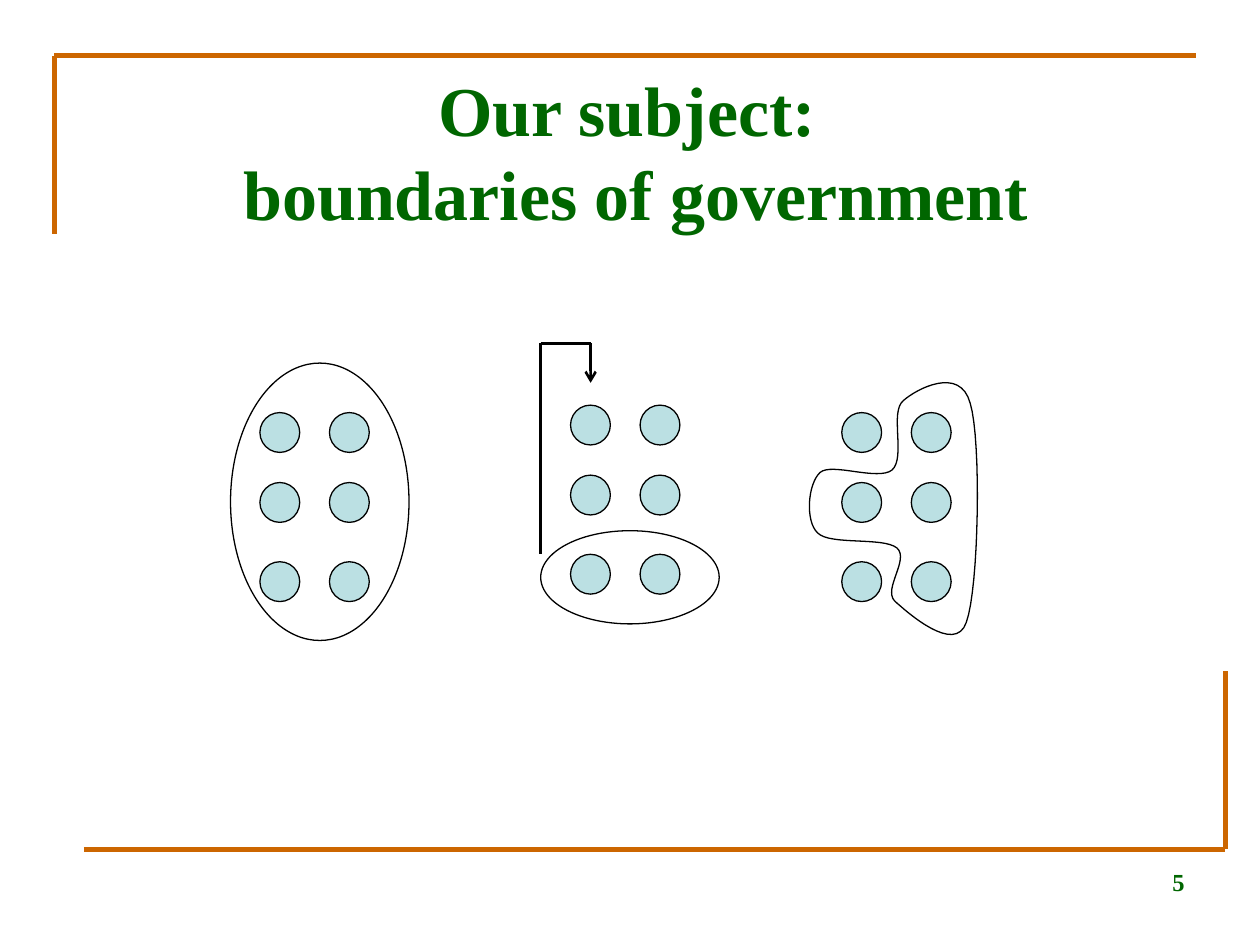
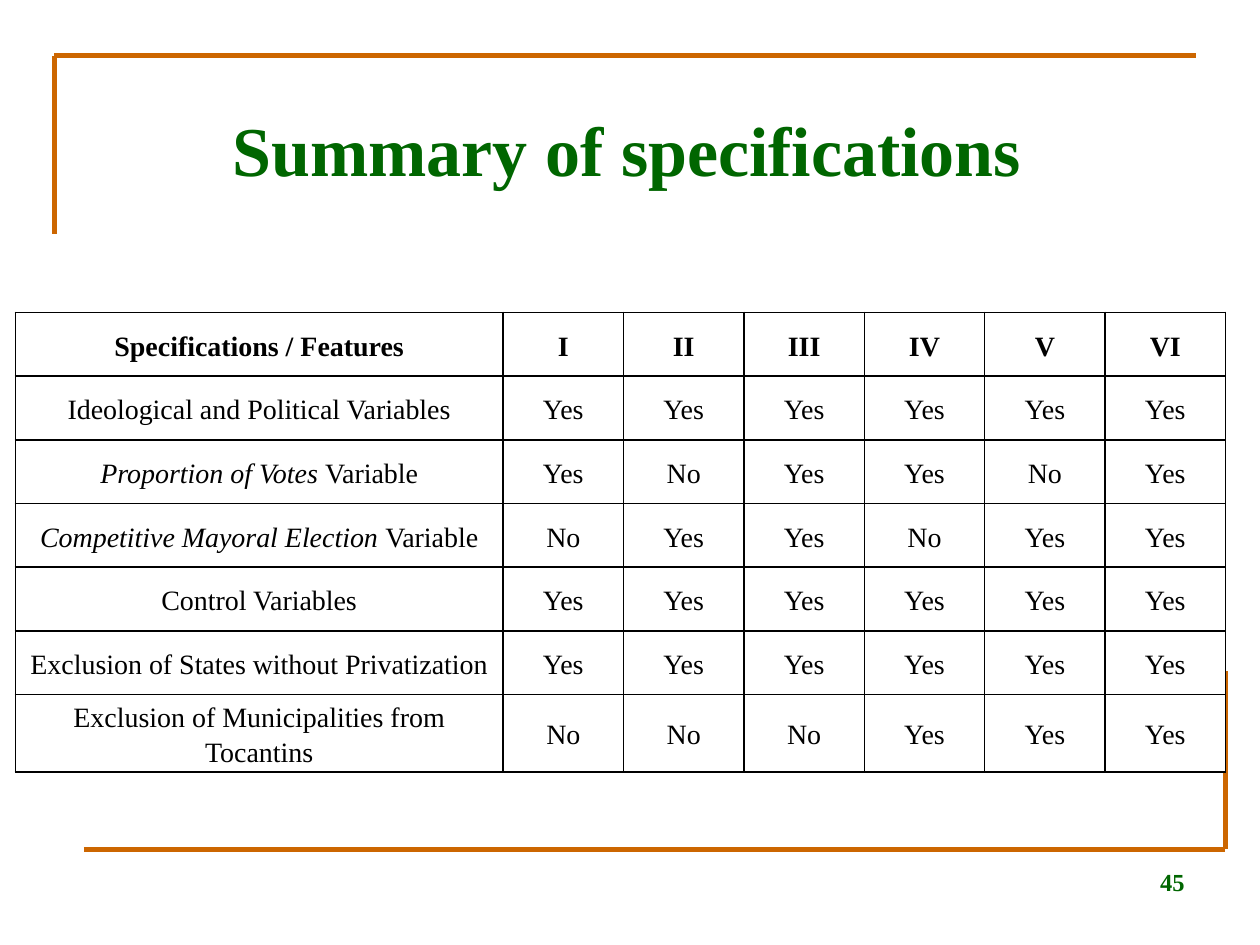
"""Build two slides on the boundaries of government and the model specifications."""
from lxml import etree
from pptx import Presentation
from pptx import util as u
from pptx.dml.color import RGBColor
from pptx.enum import shapes, text
from pptx.oxml.ns import qn

COLORS = {"rule": "CC6600", "heading": "006600", "dot": "BBE0E3", "ink": "000000", "paper": "FFFFFF"}
FONT = "Times New Roman"
TITLE_PITCH = 48
FRAME = [(31, 31.75, 683.5, 31.75), (31, 31.75, 31, 134),
         (48, 485.25, 700, 485.25), (700.25, 383.5, 700.25, 485.25)]
DOT_SIZE = 22.75
DOT_COLUMNS = (0, 39.75)
DOT_ROWS = (0, 40, 85.25)


def color(name):
    """Return a palette colour."""
    return RGBColor.from_string(COLORS[name])


def points(*values):
    """Convert numbers to point lengths."""
    return [u.Pt(value) for value in values]


def bezier(start, control_a, control_b, end, steps=16):
    """Return points along a cubic curve, without its start."""
    curve = []
    for step in range(1, steps + 1):
        t = step / steps
        weights = ((1 - t) ** 3, 3 * t * (1 - t) ** 2, 3 * t * t * (1 - t), t ** 3)
        corners = (start, control_a, control_b, end)
        curve.append(tuple(sum(w * corner[axis] for w, corner in zip(weights, corners)) for axis in (0, 1)))
    return curve


class Deck:
    """Hold the style and the current slide."""

    def __init__(self):
        self.presentation = Presentation()
        self.presentation.slide_width, self.presentation.slide_height = points(720, 540)
        self.layout = self.presentation.slide_layouts[5]
        self.slide = self.shapes = None

    def add_slide(self, title, number, top, bottom_inset=3.6):
        """Start a slide with its title and number."""
        self.slide = self.presentation.slides.add_slide(self.layout)
        self.shapes = self.slide.shapes
        if len(self.presentation.slides) == 1:
            self.frame()
        shape = self.slide.shapes.title
        shape.left, shape.top, shape.width, shape.height = points(42.5, top, 641.5, 96.5)
        frame = shape.text_frame
        frame.text = title
        frame.word_wrap = True
        frame.auto_size = text.MSO_AUTO_SIZE.NONE
        frame.vertical_anchor = text.MSO_ANCHOR.MIDDLE
        frame.margin_bottom = u.Pt(bottom_inset)
        frame.paragraphs[0].line_spacing = u.Pt(TITLE_PITCH)
        self.format(frame.paragraphs[0], 40, "heading", bold=True)
        box = self.shapes.add_textbox(*points(516.25, 491.75, 167.75, 37.5))
        box.text_frame.word_wrap = True
        box.text_frame.text = str(number)
        self.format(box.text_frame.paragraphs[0], 14, "heading", text.PP_ALIGN.RIGHT, bold=True)

    def frame(self):
        """Put the corner rules on the shared layout."""
        for index, ends in enumerate(FRAME):
            rule = self.line(*ends, "rule", 3)
            rule.element.nvCxnSpPr.cNvPr.id = 20 + index
            self.layout.shapes.element.append(rule.element)

    def group(self):
        """Collect the next shapes in a new group."""
        self.shapes = self.slide.shapes.add_group_shape().shapes

    def format(self, paragraph, size, name, align=text.PP_ALIGN.CENTER, bold=False):
        """Format a paragraph and its runs."""
        paragraph.alignment = align
        for run in paragraph.runs:
            run.font.name, run.font.size, run.font.bold = FONT, u.Pt(size), bold
            run.font.color.rgb = color(name)

    def line(self, x1, y1, x2, y2, name="ink", width=1.5, arrow=False):
        """Draw a straight line."""
        connector = self.shapes.add_connector(shapes.MSO_CONNECTOR.STRAIGHT, *points(x1, y1, x2, y2))
        connector.line.color.rgb = color(name)
        connector.line.width = u.Pt(width)
        if arrow:
            etree.SubElement(connector.line._get_or_add_ln(), qn("a:tailEnd"), type="arrow")
        etree.SubElement(connector.element.spPr, qn("a:effectLst"))
        return connector

    def outline(self, shape, fill=None):
        """Give a shape a thin outline and an optional fill."""
        shape.shadow.inherit = False
        shape.line.color.rgb = color("ink")
        shape.line.width = u.Pt(0.75)
        if fill:
            shape.fill.solid()
            shape.fill.fore_color.rgb = color(fill)
        else:
            shape.fill.background()

    def ellipse(self, left, top, width, height, fill=None):
        """Draw an ellipse."""
        shape = self.shapes.add_shape(shapes.MSO_SHAPE.OVAL, *points(left, top, width, height))
        self.outline(shape, fill)

    def dots(self, left, top):
        """Draw a grid of dots."""
        for y in DOT_ROWS:
            for x in DOT_COLUMNS:
                self.ellipse(left + x, top + y, DOT_SIZE, DOT_SIZE, "dot")

    def boundary(self, start, curves):
        """Draw a closed curved outline from a start and triples of control points."""
        outline, here = [], start
        for curve in curves:
            outline += bezier(here, *curve)
            here = curve[-1]
        builder = self.shapes.build_freeform(*points(*start))
        builder.add_line_segments([points(*point) for point in outline], close=True)
        self.outline(builder.convert_to_shape())

    def table(self, left, top, widths, row_height, rows):
        """Draw a bordered table with a bold first row."""
        graphic = self.shapes.add_table(len(rows), len(widths), *points(
            left, top, sum(widths), row_height * len(rows)))
        table = graphic.table
        for column, width in zip(table.columns, widths):
            column.width = u.Pt(width)
        for r, row in enumerate(rows):
            table.rows[r].height = u.Pt(row_height)
            for c, content in enumerate(row):
                self.cell(table.cell(r, c), content, bold=r == 0)

    def cell(self, cell, content, bold):
        """Fill one cell, with the part before a bar in italics."""
        cell.margin_left = cell.margin_right = u.Pt(5)
        cell.margin_top = cell.margin_bottom = 0
        cell.vertical_anchor = text.MSO_ANCHOR.MIDDLE
        paragraph = cell.text_frame.paragraphs[0]
        parts = content.split("|")
        for index, part in enumerate(parts):
            run = paragraph.add_run()
            run.text = part
            run.font.italic = index < len(parts) - 1
        paragraph.line_spacing = 1.15
        self.format(paragraph, 16, "ink", bold=bold)
        properties = cell._tc.get_or_add_tcPr()
        for side in ("lnL", "lnR", "lnT", "lnB"):
            border = etree.SubElement(properties, qn("a:" + side), w=str(u.Pt(1)))
            fill = etree.SubElement(border, qn("a:solidFill"))
            etree.SubElement(fill, qn("a:srgbClr"), val=COLORS["ink"])
        cell.fill.solid()
        cell.fill.fore_color.rgb = color("paper")


deck = Deck()

deck.add_slide("Our subject: \vboundaries of government", 5, top=37.5)
deck.dots(148.5, 235.75)
deck.ellipse(131.75, 207.5, 102, 158.5)
deck.group()
deck.dots(481, 235.75)
deck.boundary((511.2, 343.4), [
    ((504.7, 336.2), (519.8, 319.7), (512.6, 313.2)),
    ((504.7, 306.7), (474.5, 311.8), (467.3, 304.6)),
    ((460.1, 298.1), (461.5, 276.5), (468.7, 270)),
    ((475.2, 264.2), (501.8, 275), (509.8, 268.6)),
    ((517.7, 261.4), (508.3, 235.4), (516.2, 229)),
    ((523.4, 222.5), (548.6, 208.8), (554.4, 230.4)),
    ((560.9, 251.3), (559.4, 336.2), (552.2, 355.7)),
    ((545.8, 374.4), (518.4, 349.9), (511.2, 343.4))])
deck.group()
deck.dots(326, 231.5)
deck.ellipse(309, 303.25, 102, 53.25)
deck.group()
deck.line(309, 316.5, 309, 196.25)
deck.line(309, 196.25, 337.5, 196.25)
deck.line(337.5, 196.25, 337.5, 218.75, arrow=True)

ANSWERS = {"Y": "Yes", "N": "No"}
FEATURES = [("Ideological and Political Variables", "YYYYYY"),
            ("Proportion of Votes |Variable", "YNYYNY"),
            ("Competitive Mayoral Election |Variable", "NYYNYY"),
            ("Control Variables", "YYYYYY"),
            ("Exclusion of States without Privatization", "YYYYYY"),
            ("Exclusion of Municipalities from Tocantins", "NNNYYY")]
deck.add_slide("Summary of specifications ", 45, top=60.5, bottom_inset=3.6 + TITLE_PITCH)
header = ["Specifications / Features", "I", "II", "III", "IV", "V", "VI"]
body = [[feature] + [ANSWERS[mark] for mark in marks] for feature, marks in FEATURES]
deck.table(8.75, 178.5, [278.75] + [68.8] * 6, 36.4, [header] + body)

deck.presentation.save("out.pptx")
